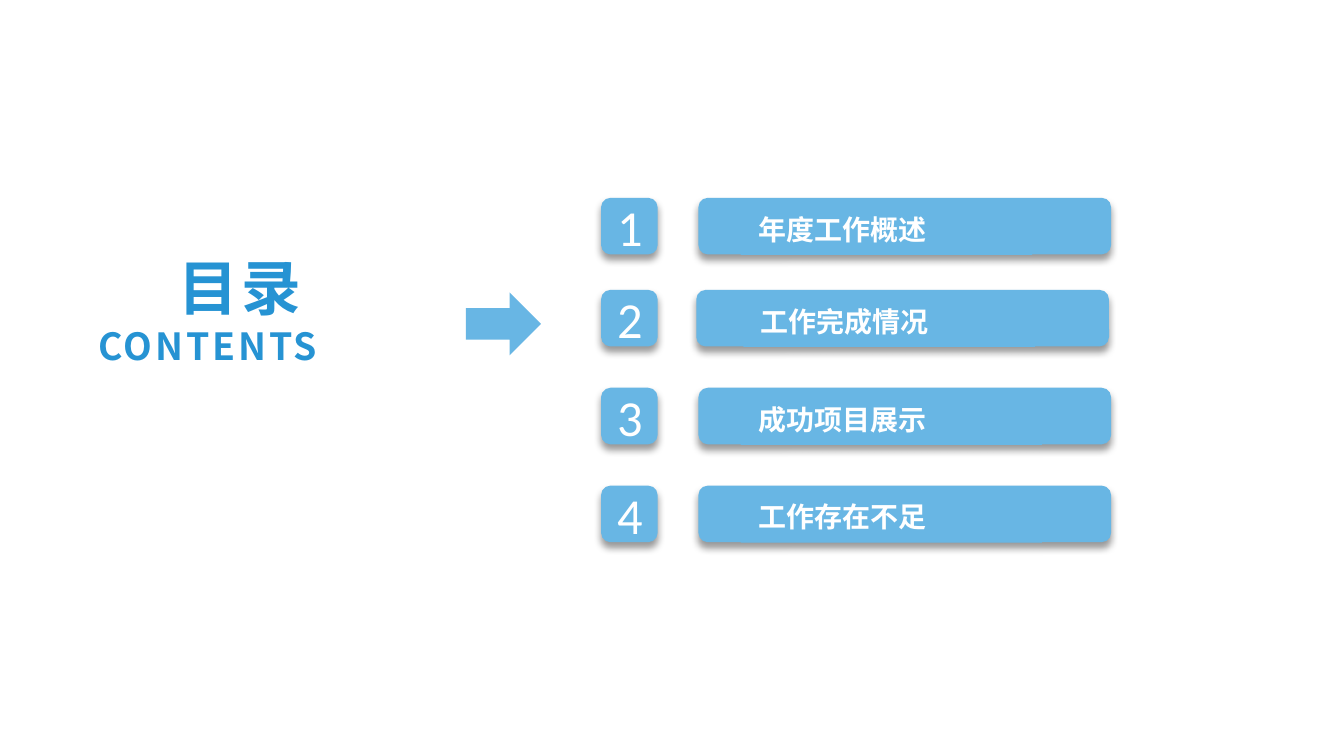
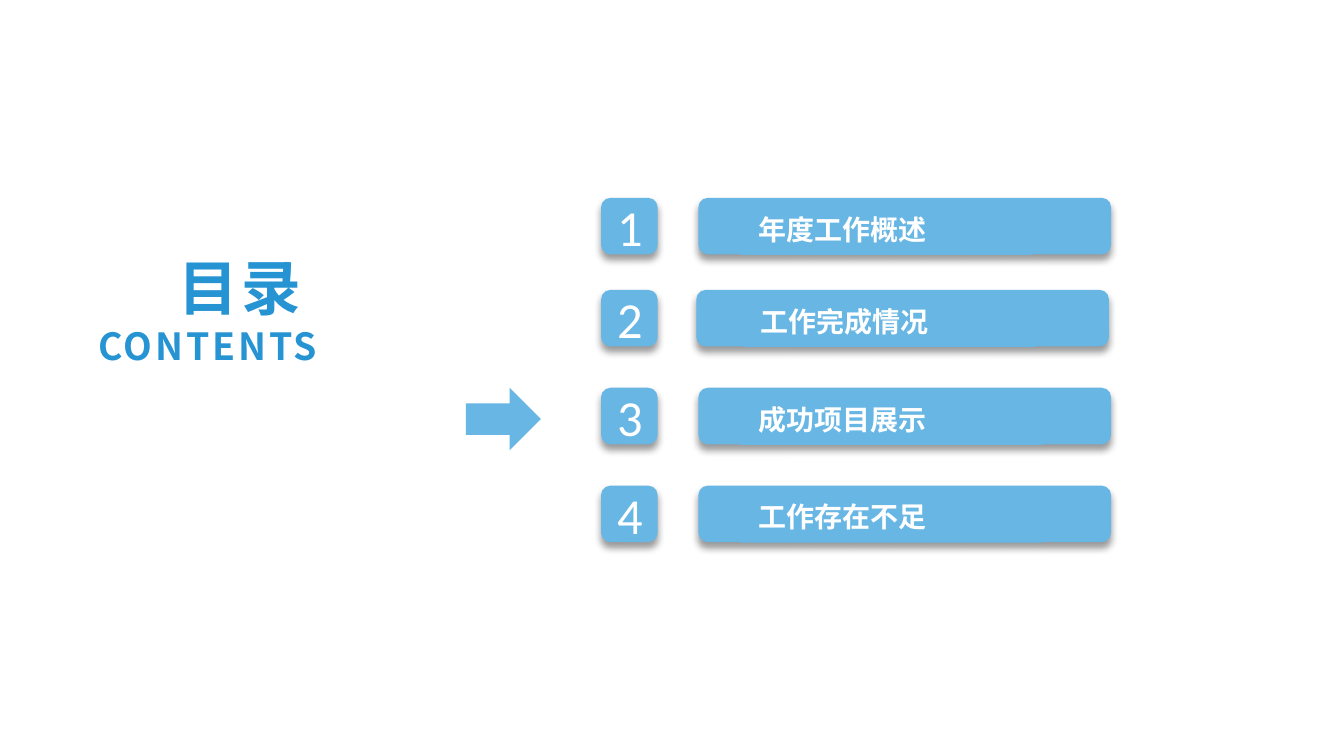
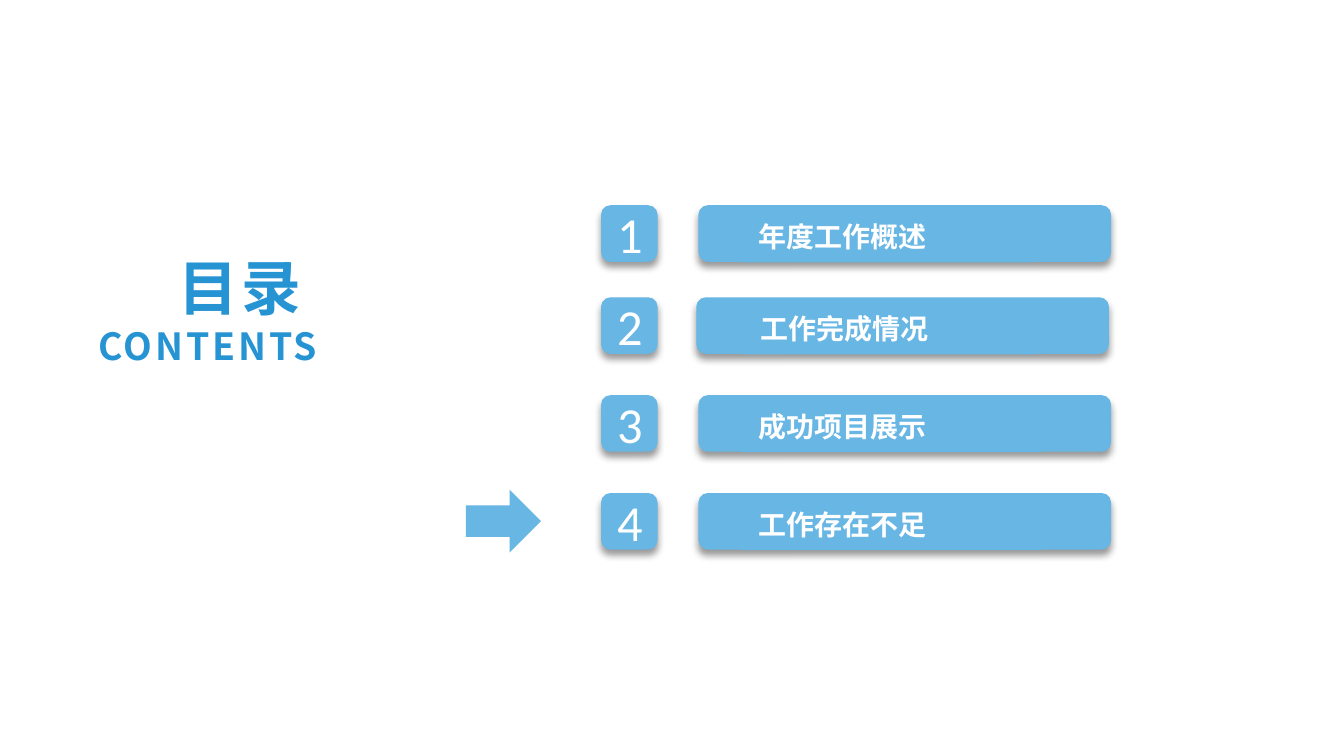
import lxml.etree
import pptx
import pptx.dml.color
import pptx.enum.shapes
import pptx.enum.text
import pptx.oxml.ns
import pptx.util

Cm = pptx.util.Cm
Pt = pptx.util.Pt
qn = pptx.oxml.ns.qn
color = pptx.dml.color.RGBColor.from_string
SHAPE = pptx.enum.shapes.MSO_SHAPE
ALIGN = pptx.enum.text.PP_ALIGN
ANCHOR = pptx.enum.text.MSO_ANCHOR
GROW = pptx.enum.text.MSO_AUTO_SIZE.SHAPE_TO_FIT_TEXT

SKY = "68B6E4"
BLUE = "2693D3"
WHITE = "FFFFFF"
HAN_FONT = "Noto Sans CJK SC"

NUMBER_LEFT = 11.36
BAR_HEIGHT = 1.07
BAR_WIDTH = 7.8
LABEL_DROP = 0.09

chapters = [
    ("年度工作概述", 3.74, 13.2, 14.0, 5.51),
    ("工作完成情况", 5.48, 13.16, 14.05, 5.51),
    ("成功项目展示", 7.33, 13.2, 14.0, 5.69),
    ("工作存在不足", 9.18, 13.2, 14.0, 5.69),
]
agendas = [(0, 5.41), (0, 7.21), (0.14, 9.14)]


def add_block(shapes, kind, left, top, width, height, raised=False):
    block = shapes.add_shape(kind, Cm(left), Cm(top), Cm(width), Cm(height))
    block.fill.solid()
    block.fill.fore_color.rgb = color(SKY)
    block.line.fill.background()
    block.shadow.inherit = False
    if raised:
        effects = block._element.spPr.find(qn("a:effectLst"))
        shadow = lxml.etree.SubElement(
            effects, qn("a:outerShdw"), blurRad=str(Pt(4)), dist=str(Pt(3)),
            dir="5400000", algn="t", rotWithShape="0")
        tint = lxml.etree.SubElement(shadow, qn("a:srgbClr"), val="000000")
        lxml.etree.SubElement(tint, qn("a:alpha"), val="40000")
    return block


def write(para, text, size, face, ink, bold, align):
    para.text = text
    para.alignment = align
    para.font.size = Pt(size)
    para.font.name = face
    para.font.bold = bold
    para.font.color.rgb = color(ink)
    defaults = para._p.pPr.find(qn("a:defRPr"))
    lxml.etree.SubElement(defaults, qn("a:ea"), typeface=face)
    return defaults


deck = pptx.Presentation()
deck.slide_width = Cm(25.4)
deck.slide_height = Cm(14.29)

for shift, arrow_top in agendas:
    page = deck.slides.add_slide(deck.slide_layouts[6])

    for number, chapter in enumerate(chapters, 1):
        name, row_top, bar_left, label_left, label_width = chapter
        top = row_top + shift

        badge = add_block(page.shapes, SHAPE.ROUNDED_RECTANGLE,
                          NUMBER_LEFT, top, BAR_HEIGHT, BAR_HEIGHT, True)
        badge.text_frame.vertical_anchor = ANCHOR.MIDDLE
        write(badge.text_frame.paragraphs[0], str(number), 27, "Calibri",
              WHITE, False, ALIGN.CENTER)

        group = page.shapes.add_group_shape()
        add_block(group.shapes, SHAPE.ROUNDED_RECTANGLE,
                  bar_left, top, BAR_WIDTH, BAR_HEIGHT, True)
        label = add_block(group.shapes, SHAPE.RECTANGLE,
                          label_left, top + LABEL_DROP, label_width, 0.99)
        frame = label.text_frame
        frame.vertical_anchor = ANCHOR.TOP
        frame.word_wrap = True
        frame.auto_size = GROW
        frame.margin_left = frame.margin_right = Cm(0.33)
        frame.margin_top = frame.margin_bottom = Cm(0.18)
        write(frame.paragraphs[0], name, 15, HAN_FONT, WHITE, True, ALIGN.LEFT)

    title = page.shapes.add_textbox(Cm(0.41), Cm(4.62), Cm(5.84), Cm(2.49))
    frame = title.text_frame
    frame.word_wrap = True
    frame.auto_size = GROW
    frame.add_paragraph()
    for para, text, size in zip(frame.paragraphs, ("目录 ", "CONTENTS"), (32, 20)):
        defaults = write(para, text, size, HAN_FONT, BLUE, True, ALIGN.RIGHT)
        defaults.set("spc", "150")

    arrow = add_block(page.shapes, SHAPE.DOWN_ARROW, 8.92, arrow_top, 1.19, 1.42)
    arrow.rotation = 270

deck.save("out.pptx")
